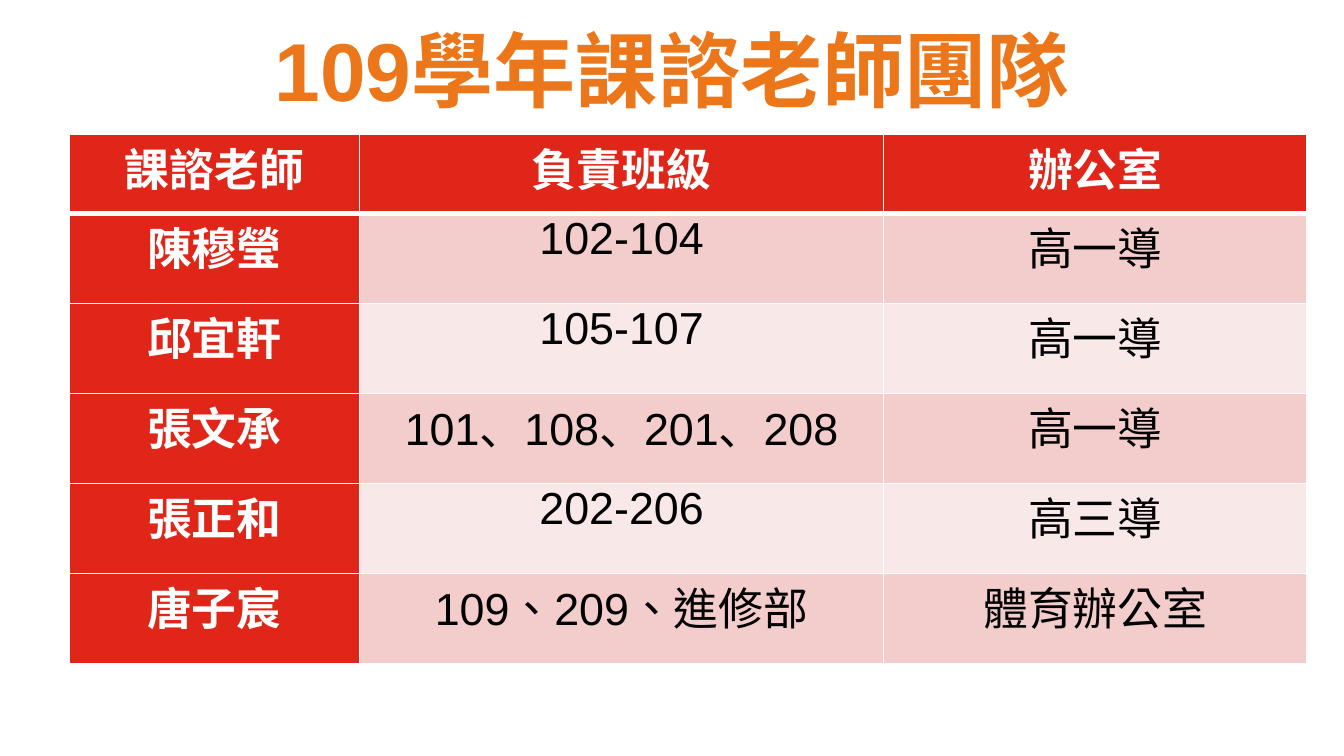
"""Build the slide listing the course advisers, their classes and offices."""
from typing import NamedTuple, Optional

from lxml.etree import SubElement
from pptx import Presentation
from pptx.dml.color import RGBColor
from pptx.enum.lang import MSO_LANGUAGE_ID as Lang
from pptx.enum.text import MSO_ANCHOR as Anchor, PP_ALIGN as Align
from pptx.oxml.ns import qn
from pptx.util import Emu, Pt

PX = 4572
FONT = "Arial"
WHITE, BLACK, ORANGE, RED = "FFFFFF", "000000", "EC771B", "DF2619"
BANDS = ("F3CDCC", "F9E8E8")
COLUMN_WIDTHS = (432, 780, 630)
HEADER_HEIGHT, ROW_HEIGHT = 118, 134


class Adviser(NamedTuple):
    """One table row and the language of its text."""
    name: str
    classes: str
    office: str
    lang: Optional[Lang] = None


HEADER = Adviser("課諮老師", "負責班級", "辦公室")
ADVISERS = (
    Adviser("陳穆瑩", "102-104", "高一導"),
    Adviser("邱宜軒", "105-107", "高一導"),
    Adviser("張文承", "101、108、201、208", "高一導"),
    Adviser("張正和", "202-206", "高三導"),
    Adviser("唐子宸", "109、209、進修部", "體育辦公室", Lang.TRADITIONAL_CHINESE),
)


def px(n: int) -> Emu:
    """Turn px into EMU."""
    return Emu(n * PX)


def rgb(value: str) -> RGBColor:
    """Turn a hex string into a colour."""
    return RGBColor.from_string(value)


def write(tf, text: str, *, size: int, color: str, bold: bool = False,
          lang: Optional[Lang] = None) -> None:
    """Write one centred line into a text frame."""
    p = tf.paragraphs[0]
    p.alignment = Align.CENTER
    r = p.add_run()
    r.text = text
    r.font.name, r.font.size, r.font.bold = FONT, Pt(size), bold
    r.font.color.rgb = rgb(color)
    if lang is not None:
        r.font.language_id = lang


def border(cell, widths: dict[str, int]) -> None:
    """Give a cell white borders of the given point widths."""
    tcPr = cell._tc.get_or_add_tcPr()
    for i, (side, width) in enumerate(widths.items()):
        ln = SubElement(tcPr, qn(f"a:ln{side}"), w=str(Pt(width)))
        fill = SubElement(ln, qn("a:solidFill"))
        SubElement(fill, qn("a:srgbClr"), val=WHITE)
        tcPr.insert(i, ln)


def add_title(slide, text: str) -> None:
    """Add the slide title."""
    tf = slide.shapes.add_textbox(px(0), px(28), px(2000), px(126)).text_frame
    tf.word_wrap = True
    tf.vertical_anchor = Anchor.MIDDLE
    tf.margin_top, tf.margin_bottom = px(22), px(0)
    write(tf, text, size=44, color=ORANGE, bold=True)


def add_roster(slide, rows: tuple[Adviser, ...]) -> None:
    """Add the table with a red header row and a red first column."""
    height = HEADER_HEIGHT + ROW_HEIGHT * (len(rows) - 1)
    table = slide.shapes.add_table(len(rows), len(COLUMN_WIDTHS), px(103), px(200),
                                   px(sum(COLUMN_WIDTHS)), px(height)).table
    for column, width in zip(table.columns, COLUMN_WIDTHS):
        column.width = px(width)
    for i, row in enumerate(rows):
        table.rows[i].height = px(ROW_HEIGHT if i else HEADER_HEIGHT)
        for j, text in enumerate((row.name, row.classes, row.office)):
            cell = table.cell(i, j)
            heading = i == 0 or j == 0
            cell.margin_left = cell.margin_right = px(14)
            cell.margin_top = cell.margin_bottom = px(0)
            cell.fill.solid()
            cell.fill.fore_color.rgb = rgb(RED if heading else BANDS[(i - 1) % 2])
            border(cell, {"L": 1, "R": 1, "T": 3 if i == 1 else 1, "B": 1 if i else 3})
            write(cell.text_frame, text, size=24, bold=heading, lang=row.lang,
                  color=WHITE if heading else BLACK)


def main() -> None:
    """Build and save the presentation."""
    prs = Presentation()
    prs.slide_width, prs.slide_height = px(2000), px(1125)
    slide = prs.slides.add_slide(prs.slide_layouts[6])
    add_title(slide, "109學年課諮老師團隊")
    add_roster(slide, (HEADER, *ADVISERS))
    prs.save("out.pptx")


if __name__ == "__main__":
    main()
